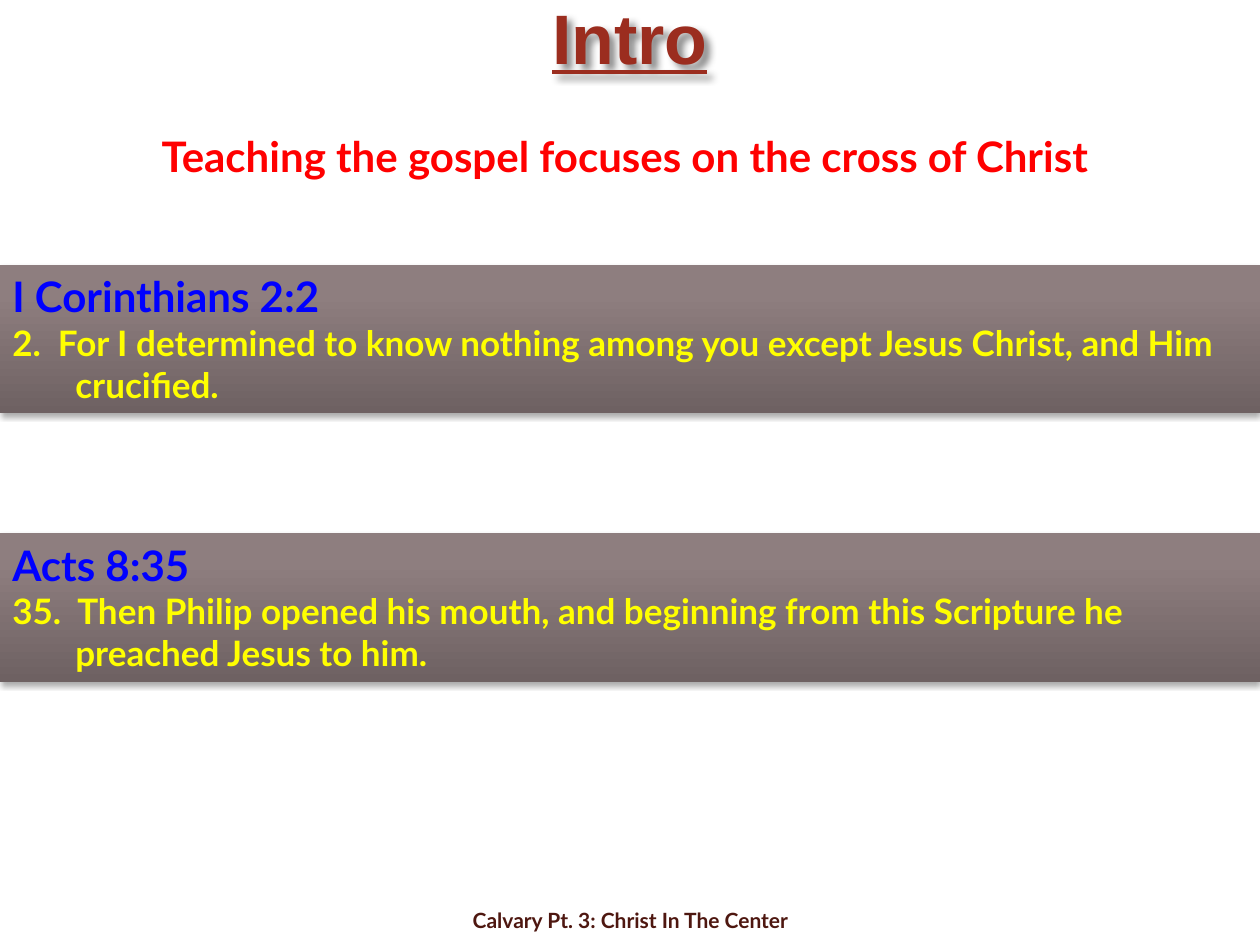
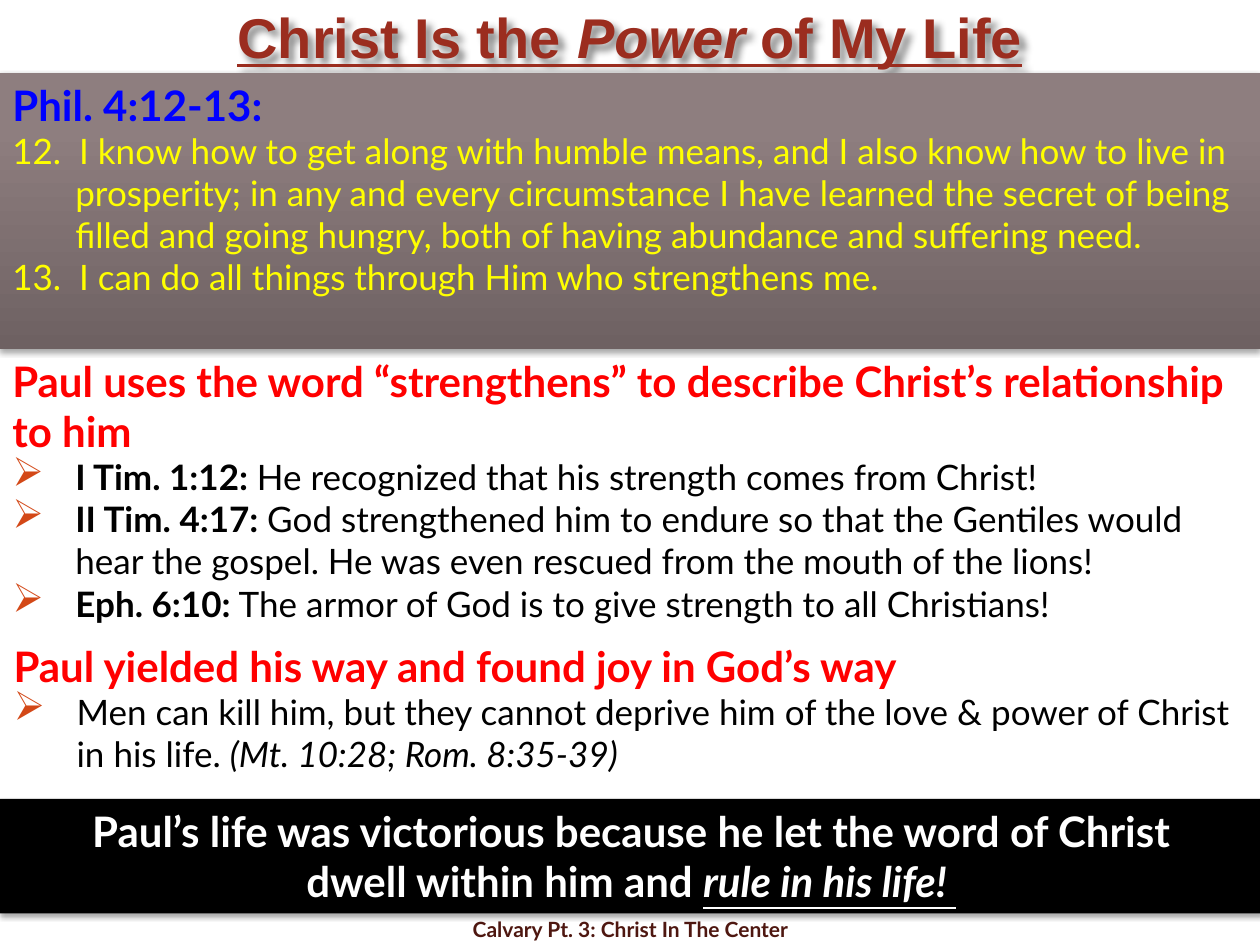
from copy import deepcopy

from pptx import Presentation
from pptx.dml.color import RGBColor
from pptx.enum.shapes import MSO_SHAPE
from pptx.enum.text import MSO_ANCHOR, PP_ALIGN
from pptx.oxml import parse_xml
from pptx.oxml.ns import nsdecls, qn
from pptx.util import Inches, Pt

W, H = Inches(10), Inches(7.5)
COL, ROW = W / 100, H / 100

RUST, MAROON, ORANGE = "9B2D1F", "4E1710", "D34817"
RED, BLUE, YELLOW = "FF0000", "0000FF", "FFFF00"
BLACK, WHITE = "000000", "FFFFFF"
BAND_STOPS = [(0, "6E6162"), (0.8, "8E7E7F"), (1, "8F7E80")]
HEADING_SIZE, BODY_SIZE = 24, 20
HANG = Inches(0.5)
TITLE_ROWS = 7.73
VERSE_ROWS = 15.73
FOOTER = "Calvary Pt. 3: Christ In The Center"


def rgb(value):
    return RGBColor.from_string(value)


def place(box):
    """Turn (column, row, columns, rows) into slide lengths."""
    x, y, w, h = box
    return int(x * COL), int(y * ROW), int(w * COL), int(h * ROW)


def add_shadow(sp, blur, dist, angle, alpha):
    sp.shadow.inherit = False
    effects = sp._element.spPr.find(qn("a:effectLst"))
    effects.append(parse_xml(
        f'<a:outerShdw {nsdecls("a")} blurRad="{Pt(blur)}" dist="{Pt(dist)}" '
        f'dir="{angle * 60000}" algn="ctr" rotWithShape="0"><a:srgbClr val="{BLACK}">'
        f'<a:alpha val="{alpha * 1000}"/></a:srgbClr></a:outerShdw>'))


def setup_frame(sp, anchor=MSO_ANCHOR.TOP):
    tf = sp.text_frame
    tf.word_wrap = True
    tf.vertical_anchor = anchor
    return tf


def add_text_box(slide, box, anchor=MSO_ANCHOR.TOP):
    sp = slide.shapes.add_textbox(*place(box))
    setup_frame(sp, anchor)
    return sp


def add_band(slide, box, color=None):
    """Full-width shadowed band, with the shared gradient unless a colour is given."""
    sp = slide.shapes.add_shape(MSO_SHAPE.RECTANGLE, *place(box))
    sp.line.fill.background()
    if color:
        sp.fill.solid()
        sp.fill.fore_color.rgb = rgb(color)
    else:
        sp.fill.gradient()
        sp.fill.gradient_angle = 90
        stops = sp._element.spPr.find(".//" + qn("a:gsLst"))
        stops.append(deepcopy(stops[-1]))
        for stop, (position, shade) in zip(sp.fill.gradient_stops, BAND_STOPS):
            stop.position = position
            stop.color.rgb = rgb(shade)
    add_shadow(sp, 3.1, 1.8, 90, 35)
    setup_frame(sp)
    return sp


def add_paragraph(tf, runs, size, color, font="Lato", align=PP_ALIGN.LEFT,
                  hang=True, bullet=False):
    """Append runs of (text, style letters), where the letters are b, i and u."""
    first = tf.paragraphs[0]
    p = tf.add_paragraph() if first.runs else first
    p.alignment = align
    if hang:
        pPr = p._p.get_or_add_pPr()
        pPr.set("marL", str(HANG))
        pPr.set("indent", str(-HANG))
        if bullet:
            for xml in (f'<a:buClr {nsdecls("a")}><a:srgbClr val="{ORANGE}"/></a:buClr>',
                        f'<a:buSzPct {nsdecls("a")} val="115000"/>',
                        f'<a:buChar {nsdecls("a")} char="➢"/>'):
                pPr.append(parse_xml(xml))
    for text, style in runs:
        r = p.add_run()
        r.text = text
        r.font.name, r.font.size = font, Pt(size)
        r.font.color.rgb = rgb(color)
        r.font.bold = "b" in style
        r.font.italic = "i" in style
        r.font.underline = "u" in style


def add_title(slide, runs, size):
    sp = add_text_box(slide, (0, 0, 100, TITLE_ROWS), MSO_ANCHOR.MIDDLE)
    add_shadow(sp, 4, 4, 45, 45)
    add_paragraph(sp.text_frame, runs, size, RUST, "Arial", PP_ALIGN.CENTER, hang=False)


def add_footer(slide, rows):
    sp = add_text_box(slide, (34.2, 100 - rows, 31.7, rows), MSO_ANCHOR.MIDDLE)
    add_paragraph(sp.text_frame, [(FOOTER, "b")], 12, MAROON,
                  align=PP_ALIGN.CENTER, hang=False)


def add_scripture(slide, box, reference, verses, style=""):
    tf = add_band(slide, box).text_frame
    add_paragraph(tf, [(reference, "b")], HEADING_SIZE, BLUE)
    for verse in verses:
        add_paragraph(tf, [(verse, style)], BODY_SIZE, YELLOW)


def add_points(slide, box, heading, points, hang_heading):
    tf = add_text_box(slide, box).text_frame
    add_paragraph(tf, [(heading, "b")], HEADING_SIZE, RED, hang=hang_heading)
    for runs in points:
        add_paragraph(tf, runs, BODY_SIZE, BLACK, bullet=True)


def add_conclusion(slide, box, lines):
    tf = add_band(slide, box, BLACK).text_frame
    for runs in lines:
        add_paragraph(tf, runs, HEADING_SIZE, WHITE, align=PP_ALIGN.CENTER)


def build_intro(slide):
    add_title(slide, [("Intro", "bu")], 40)
    add_footer(slide, 5.33)
    tf = add_text_box(slide, (0, 13.2, 100, 6.67)).text_frame
    add_paragraph(tf, [("Teaching the gospel focuses on the cross of Christ ", "b")],
                  HEADING_SIZE, RED, align=PP_ALIGN.CENTER)
    passages = [
        (28, "I Corinthians 2:2",
         "2.  For I determined to know nothing among you except Jesus Christ, "
         "and Him crucified."),
        (56.4, "Acts 8:35",
         "35.  Then Philip opened his mouth, and beginning from this Scripture "
         "he preached Jesus to him."),
    ]
    for top, reference, verse in passages:
        add_scripture(slide, (0, top, 100, VERSE_ROWS), reference, [verse], "b")


def build_power(slide):
    add_title(slide, [("Christ Is the ", "bu"), ("Power", "biu"), (" of My Life", "bu")], 32)
    add_footer(slide, 3.33)
    scripture_rows, strength_rows = 29.2, 30.14
    strength_top = TITLE_ROWS + scripture_rows
    add_scripture(slide, (0, TITLE_ROWS, 100, scripture_rows), "Phil. 4:12-13:", [
        "12.  I know how to get along with humble means, and I also know how to live in "
        "prosperity; in any and every circumstance I have learned the secret of being "
        "filled and going hungry, both of having abundance and suffering need.",
        "13.  I can do all things through Him who strengthens me."])
    add_points(
        slide, (0, strength_top, 100, strength_rows),
        "Paul uses the word “strengthens” to describe Christ’s relationship to him",
        [[("I Tim. 1:12: ", "b"),
          ("He recognized that his strength comes from Christ!", "")],
         [("II Tim. 4:17: ", "b"),
          ("God strengthened him to endure so that the Gentiles would hear the gospel. "
           "He was even rescued from the mouth of the lions!", "")],
         [("Eph. 6:10:", "b"),
          (" The armor of God is to give strength to all Christians!", "")]],
        hang_heading=False)
    add_points(
        slide, (0.1, strength_top + strength_rows, 100, VERSE_ROWS),
        "Paul yielded his way and found joy in God’s way",
        [[("Men can kill him, but they cannot deprive him of the love & power of Christ "
           "in his life. ", ""),
          ("(Mt. 10:28; Rom. 8:35-39)", "i")]],
        hang_heading=True)
    add_conclusion(slide, (0, 84.53, 100.2, 12.13), [
        [("Paul’s life was victorious because he let the word of Christ", "b")],
        [("dwell within him and ", "b"), ("rule in his life! ", "biu")]])


def main():
    prs = Presentation()
    prs.slide_width, prs.slide_height = W, H
    for build in (build_intro, build_power):
        build(prs.slides.add_slide(prs.slide_layouts[6]))
    prs.save("out.pptx")


if __name__ == "__main__":
    main()
